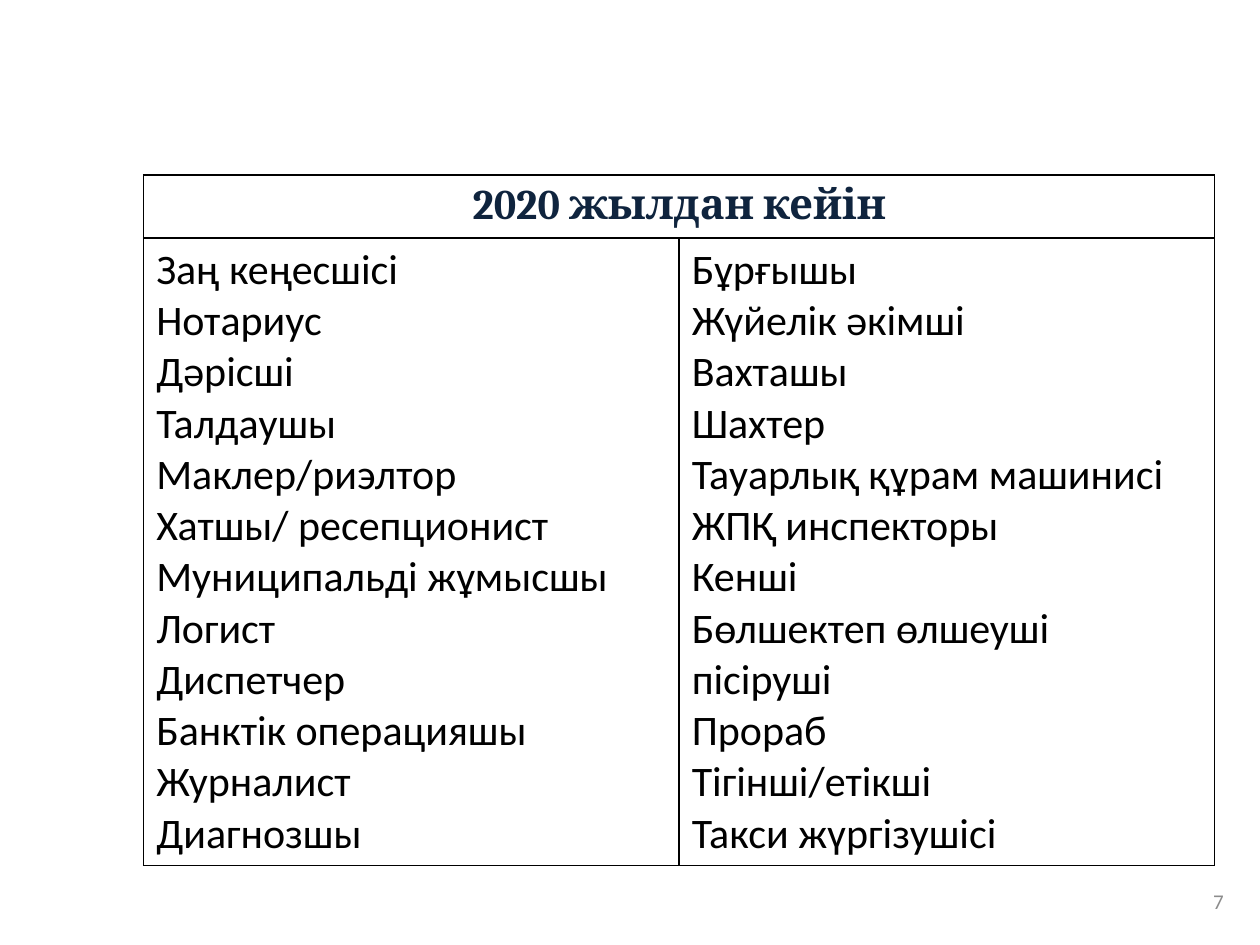
"""Build a slide with a two-column table of occupations after 2020."""
import pptx
import pptx.dml.color
import pptx.enum.text
import pptx.oxml
import pptx.oxml.ns
import pptx.util

Inches = pptx.util.Inches
Pt = pptx.util.Pt
RGBColor = pptx.dml.color.RGBColor
ALIGN = pptx.enum.text.PP_ALIGN
ANCHOR = pptx.enum.text.MSO_ANCHOR

BLACK = RGBColor(0x00, 0x00, 0x00)
NAVY = RGBColor(0x0F, 0x24, 0x3E)
GRAY = RGBColor(0x8C, 0x8C, 0x8C)

HEADING = ["2020 жылдан кейін"]
LEFT_JOBS = [
    "Заң кеңесшісі", "Нотариус", "Дәрісші", "Талдаушы",
    "Маклер/риэлтор", "Хатшы/ ресепционист", "Муниципальді жұмысшы", "Логист",
    "Диспетчер", "Банктік операцияшы", "Журналист", "Диагнозшы",
]
RIGHT_JOBS = [
    "Бұрғышы", "Жүйелік әкімші", "Вахташы", "Шахтер",
    "Тауарлық құрам машинисі", "ЖПҚ инспекторы", "Кенші", "Бөлшектеп өлшеуші",
    "пісіруші", "Прораб", "Тігінші/етікші", "Такси жүргізушісі",
]

HEADING_FONT = {"name": "Cambria", "size": Pt(24), "bold": True}
JOB_FONT = {"name": "Calibri", "size": Pt(24), "bold": False}
NUMBER_FONT = {"name": "Calibri", "size": Pt(12), "bold": False}


def write(tf, lines, font, color, align):
    for i, line in enumerate(lines):
        p = tf.paragraphs[0] if i == 0 else tf.add_paragraph()
        p.alignment = align
        r = p.add_run()
        r.text = line
        for key, value in font.items():
            setattr(r.font, key, value)
        r.font.color.rgb = color


def add_borders(cell):
    tc_pr = cell._tc.get_or_add_tcPr()
    for i, side in enumerate(("lnL", "lnR", "lnT", "lnB")):
        tc_pr.insert(i, pptx.oxml.parse_xml(
            f'<a:{side} {pptx.oxml.ns.nsdecls("a")} w="{Pt(1)}"><a:solidFill>'
            f'<a:srgbClr val="{BLACK}"/></a:solidFill></a:{side}>'))


prs = pptx.Presentation()
prs.slide_width = Inches(10)
prs.slide_height = Inches(7.5)
s = prs.slides.add_slide(prs.slide_layouts[6])

sp = s.shapes.add_textbox(Inches(7.17), Inches(6.95), Inches(2.64), Inches(0.4))
tf = sp.text_frame
tf.word_wrap = True
tf.vertical_anchor = ANCHOR.MIDDLE
write(tf, ["7"], NUMBER_FONT, GRAY, ALIGN.RIGHT)

table = s.shapes.add_table(
    2, 2, Inches(1.14), Inches(1.39), Inches(8.5), Inches(5.46)).table
table.first_row = False
table.horz_banding = False
for row, height in zip(table.rows, (0.48, 4.98)):
    row.height = Inches(height)
table.cell(0, 0).merge(table.cell(0, 1))

for cell in (table.cell(r, c) for r in range(2) for c in range(2)):
    cell.fill.background()
    add_borders(cell)

write(table.cell(0, 0).text_frame, HEADING, HEADING_FONT, NAVY, ALIGN.CENTER)
for c, jobs in enumerate((LEFT_JOBS, RIGHT_JOBS)):
    write(table.cell(1, c).text_frame, jobs, JOB_FONT, BLACK, ALIGN.LEFT)

prs.save("out.pptx")
